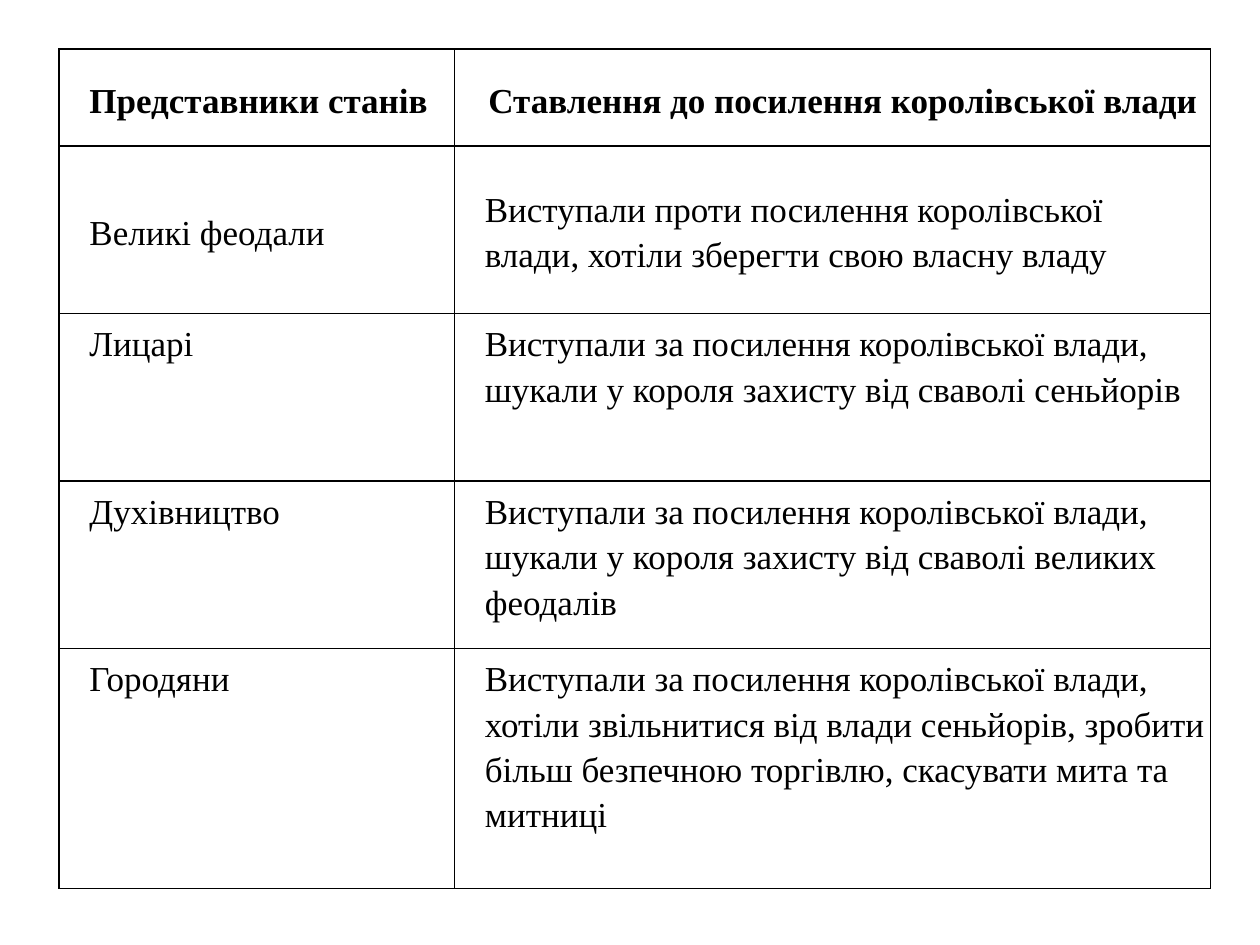
from dataclasses import dataclass
from typing import Any

from lxml import etree
from pptx import Presentation
from pptx.dml.color import RGBColor
from pptx.enum.text import MSO_ANCHOR
from pptx.oxml.ns import qn
from pptx.util import Pt

TOP, MIDDLE = MSO_ANCHOR.TOP, MSO_ANCHOR.MIDDLE

COLUMN_WIDTHS = [226, 432]
ROW_HEIGHTS = [55.5, 95.7, 95.7, 95.7, 137]
ROWS = [
    ("Представники станів", "Ставлення до посилення королівської влади"),
    ("Великі феодали",
     "Виступали проти посилення королівської влади, хотіли зберегти свою власну владу"),
    ("Лицарі",
     "Виступали за посилення королівської влади, шукали у короля захисту від сваволі сеньйорів"),
    ("Духівництво",
     "Виступали за посилення королівської влади, шукали у короля захисту від сваволі великих "
     "феодалів"),
    ("Городяни",
     "Виступали за посилення королівської влади, хотіли звільнитися від влади сеньйорів, "
     "зробити більш безпечною торгівлю, скасувати мита та митниці"),
]


def color(value):
    return RGBColor.from_string(value)


@dataclass
class Builder:
    slide: Any
    font: str = "Times New Roman"
    size: float = 20
    ink: str = "000000"
    indent: float = 14.4
    border: float = 1

    def borders(self, cell):
        tc_pr = cell._tc.get_or_add_tcPr()
        for i, side in enumerate(("lnL", "lnR", "lnT", "lnB")):
            ln = etree.Element(qn(f"a:{side}"), w=str(Pt(self.border)))
            fill = etree.SubElement(ln, qn("a:solidFill"))
            etree.SubElement(fill, qn("a:srgbClr"), val=self.ink)
            tc_pr.insert(i, ln)

    def cell(self, cell, text, anchor, margins, bold, spacing):
        """Fill one cell; margins are horizontal and vertical."""
        cell.fill.background()
        cell.vertical_anchor = anchor
        cell.margin_left = cell.margin_right = Pt(margins[0])
        cell.margin_top = cell.margin_bottom = Pt(margins[1])
        cell.text = text
        p = cell.text_frame.paragraphs[0]
        p.line_spacing = spacing
        p._p.get_or_add_pPr().set("marL", str(Pt(self.indent)))
        p.font.name = self.font
        p.font.size = Pt(self.size)
        p.font.bold = bold
        p.font.color.rgb = color(self.ink)
        self.borders(cell)

    def table(self, left, top, widths, heights, rows):
        table = self.slide.shapes.add_table(
            len(rows), len(widths), Pt(left), Pt(top),
            Pt(sum(widths)), Pt(sum(heights))).table
        table.first_row = table.horz_banding = False
        for column, width in zip(table.columns, widths):
            column.width = Pt(width)
        for i, (height, texts) in enumerate(zip(heights, rows)):
            table.rows[i].height = Pt(height)
            header = i == 0
            for j, text in enumerate(texts):
                self.cell(table.cell(i, j), text,
                          anchor=MIDDLE if i < 2 else TOP,
                          margins=(5, 0) if header and j == 1 else (3, 3),
                          bold=header, spacing=1.19 if header else 1.17)


def main():
    prs = Presentation()
    prs.slide_width, prs.slide_height = Pt(720), Pt(540)
    s = Builder(prs.slides.add_slide(prs.slide_layouts[6]))
    s.table(33.7, 28, COLUMN_WIDTHS, ROW_HEIGHTS, ROWS)
    prs.save("out.pptx")


if __name__ == "__main__":
    main()
